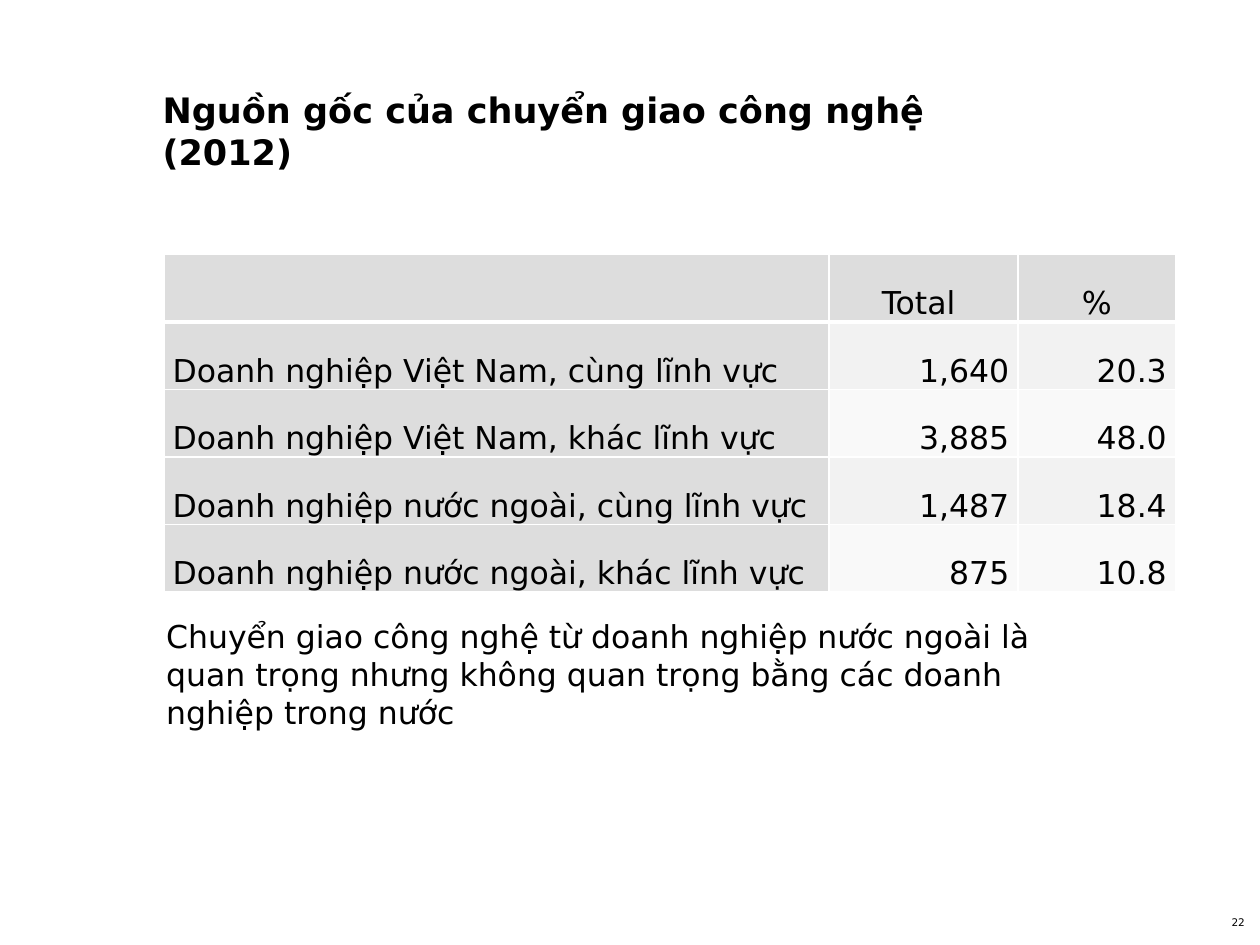
from lxml import etree
from pptx import Presentation
from pptx import util as u
from pptx.dml.color import RGBColor
from pptx.enum import text
from pptx.oxml import ns

FONT = "DejaVu Sans"
BLACK = RGBColor(0x00, 0x00, 0x00)
WHITE = RGBColor(0xFF, 0xFF, 0xFF)
LABEL_GREY = RGBColor(0xDD, 0xDD, 0xDD)
BANDS = [RGBColor(0xF2, 0xF2, 0xF2), RGBColor(0xF9, 0xF9, 0xF9)]

deck = Presentation()
deck.slide_width, deck.slide_height = u.Inches(10), u.Inches(7.5)
page = deck.slides.add_slide(deck.slide_layouts[5])


def share(left, top, width, height):
    """Turn percentages of the slide's width and height into lengths."""
    across, down = deck.slide_width / 100, deck.slide_height / 100
    return [u.Emu(round(length)) for length in
            (left * across, top * down, width * across, height * down)]


def write(frame, words, size, align=text.PP_ALIGN.LEFT, bold=False):
    frame.text = words
    para = frame.paragraphs[0]
    para.alignment = align
    for span in para.runs:
        span.font.name, span.font.size, span.font.bold = FONT, u.Pt(size), bold
        span.font.color.rgb = BLACK
    return para


# Title
title = page.shapes.title
title.left, title.top, title.width, title.height = share(12.9, 8.93, 62.9, 9.33)
frame = title.text_frame
frame.margin_left = frame.margin_right = frame.margin_top = frame.margin_bottom = 0
frame.vertical_anchor = text.MSO_ANCHOR.BOTTOM
frame.auto_size = text.MSO_AUTO_SIZE.NONE
frame.word_wrap = True
write(frame, "Nguồn gốc của chuyển giao công nghệ (2012)", 20, bold=True)

# Table of technology sources
rows = [
    ("", "Total ", "%"),
    ("Doanh nghiệp Việt Nam, cùng lĩnh vực", "1,640", "20.3"),
    ("Doanh nghiệp Việt Nam, khác lĩnh vực", "3,885", "48.0"),
    ("Doanh nghiệp nước ngoài, cùng lĩnh vực", "1,487", "18.4"),
    ("Doanh nghiệp nước ngoài, khác lĩnh vực", "875", "10.8"),
]
column_shares = [52.8, 15, 12.5]
table = page.shapes.add_table(
    len(rows), len(column_shares), *share(13, 26.93, sum(column_shares), 35.73)).table
for column, width in zip(table.columns, column_shares):
    column.width = share(0, 0, width, 0)[2]

for r, row in enumerate(rows):
    for c, words in enumerate(row):
        cell = table.cell(r, c)
        cell.margin_left = cell.margin_right = u.Inches(0.07)
        cell.margin_top = cell.margin_bottom = 0
        cell.vertical_anchor = text.MSO_ANCHOR.BOTTOM
        if c == 0:
            align = text.PP_ALIGN.LEFT
        elif r == 0:
            align = text.PP_ALIGN.CENTER
        else:
            align = text.PP_ALIGN.RIGHT
        write(cell.text_frame, words, 18, align).line_spacing = 1.15

        # Border lines come before the fill in the cell's properties
        properties = cell._tc.get_or_add_tcPr()
        for side in ("lnL", "lnR", "lnT", "lnB"):
            below_header = (r, side) in ((0, "lnB"), (1, "lnT"))
            line = etree.SubElement(properties, ns.qn("a:" + side),
                                    w=str(u.Pt(3 if below_header else 1)))
            paint = etree.SubElement(line, ns.qn("a:solidFill"))
            etree.SubElement(paint, ns.qn("a:srgbClr"), val=str(WHITE))
        cell.fill.solid()
        cell.fill.fore_color.rgb = LABEL_GREY if r == 0 or c == 0 else BANDS[(r - 1) % 2]

# Slide number
number = page.shapes.add_textbox(*share(94.2, 96.93, 4.6, 2.27)).text_frame
number.margin_left = number.margin_right = number.margin_top = number.margin_bottom = 0
number.word_wrap = True
write(number, "22", 6, text.PP_ALIGN.RIGHT)

# Conclusion
conclusion = page.shapes.add_textbox(*share(12.2, 64.67, 73.2, 13.47)).text_frame
conclusion.word_wrap = True
conclusion.auto_size = text.MSO_AUTO_SIZE.SHAPE_TO_FIT_TEXT
write(conclusion, "Chuyển giao công nghệ từ doanh nghiệp nước ngoài là quan trọng "
      "nhưng không quan trọng bằng các doanh nghiệp trong nước", 18)

deck.save("out.pptx")
